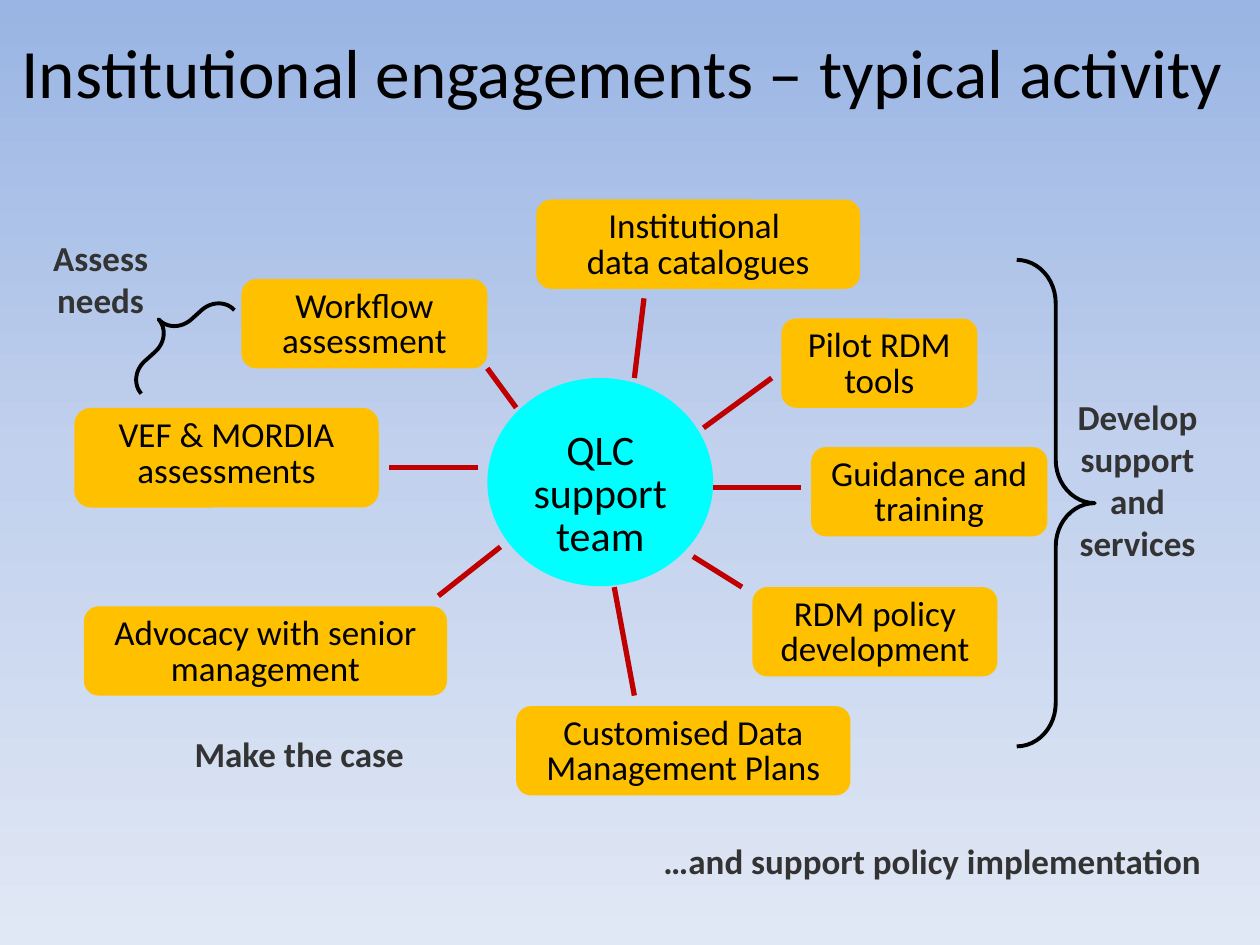
from copy import deepcopy
from lxml import etree
from pptx import Presentation
from pptx import util as u
from pptx.dml.color import RGBColor
from pptx.enum import shapes, text
from pptx.oxml import ns

BLACK, GREY, AMBER, CYAN, RED = "000000", "333333", "FFC000", "00FFFF", "C00000"


def paint(color, value):
    color.rgb = RGBColor.from_string(value)


def write(shape, words, size=20, color=BLACK, bold=False, align="CENTER",
          anchor="TOP", spacing=None, top=3.6):
    frame = shape.text_frame
    frame.word_wrap = True
    frame.margin_top = u.Pt(top)
    frame.vertical_anchor = getattr(text.MSO_ANCHOR, anchor)
    frame.text = words
    for para in frame.paragraphs:
        para.alignment = getattr(text.PP_ALIGN, align)
        if spacing:
            para.line_spacing = spacing
        for span in para.runs:
            span.font.name = "Calibri"
            span.font.size = u.Pt(size)
            span.font.bold = bold
            paint(span.font.color, color)


deck = Presentation()
deck.slide_width, deck.slide_height = u.Pt(720), u.Pt(540)
page = deck.slides.add_slide(deck.slide_layouts[5])

backdrop = page.background.fill
backdrop.gradient()
backdrop.gradient_angle = 270
stop_list = page.element.find(".//" + ns.qn("a:gsLst"))
stop_list.insert(1, deepcopy(stop_list[0]))
stops = [(0, "9AB5E4"), (0.5, "C2D1ED"), (1, "E1E8F5")]
for stop, (position, color) in zip(backdrop.gradient_stops, stops):
    stop.position = position
    paint(stop.color, color)

title = page.shapes.title
title.left, title.top, title.width, title.height = map(u.Pt, (0, 12.5, 720, 56))
write(title, "Institutional engagements – typical activity ", size=39.6, anchor="MIDDLE")

labels = [
    ("Assess needs", 0, 131.5, 115, 55, "CENTER"),
    ("Make the case", 64.5, 415, 213, 32, "CENTER"),
    ("Develop support and services", 599.5, 222.5, 101, 104, "CENTER"),
    ("…and support policy implementation", 289.5, 476, 404, 32, "RIGHT"),
]
for words, left, top, width, height, align in labels:
    box = page.shapes.add_textbox(*map(u.Pt, (left, top, width, height)))
    write(box, words, color=GREY, bold=True, align=align)

braces = [(581, 148.5, 44.6, 278, 0), (86.5, 156, 25, 71.5, 228.1)]
for left, top, width, height, angle in braces:
    brace = page.shapes.add_shape(
        shapes.MSO_SHAPE.RIGHT_BRACE, *map(u.Pt, (left, top, width, height)))
    brace.adjustments[0], brace.adjustments[1] = 0.556, 0.5
    brace.rotation = angle
    brace.shadow.inherit = False
    brace.fill.background()
    brace.line.width = u.Pt(2.25)
    paint(brace.line.color, BLACK)

ROUND, OVAL = shapes.MSO_SHAPE.ROUNDED_RECTANGLE, shapes.MSO_SHAPE.OVAL
nodes = [
    ("QLC support team", 278.5, 216, 129, 119, OVAL, CYAN, 24, 13),
] + [(*activity, ROUND, AMBER, 20, 3.6) for activity in [
    ("Institutional \ndata catalogues", 306.5, 114, 185, 51),
    ("Pilot RDM tools", 446.5, 182, 112, 51),
    ("Guidance and training", 463.5, 255.5, 135, 51),
    ("RDM policy development", 430, 335.5, 140, 51),
    ("Customised Data Management Plans", 295, 403.5, 191, 51),
    ("Advocacy with senior management", 48, 346.5, 207.5, 51),
    ("VEF & MORDIA assessments", 42.5, 233, 174, 57),
    ("Workflow assessment", 138, 159.5, 140.5, 51),
]]
for words, left, top, width, height, kind, color, size, inset in nodes:
    node = page.shapes.add_shape(kind, *map(u.Pt, (left, top, width, height)))
    node.shadow.inherit = False
    node.fill.solid()
    paint(node.fill.fore_color, color)
    node.line.fill.background()
    write(node, words, size=size, spacing=0.85, top=inset)

spokes = [
    (368, 170.5, 362.5, 216),
    (402, 244.5, 441, 216),
    (407.5, 278.5, 458, 278.5),
    (424, 335.5, 396, 318),
    (362.5, 397.5, 351, 335.5),
    (250.5, 340.5, 286, 312.5),
    (222.5, 267, 273, 267),
    (278.5, 210.5, 295, 233),
]
for ends in spokes:
    spoke = page.shapes.add_connector(shapes.MSO_CONNECTOR.STRAIGHT, *map(u.Pt, ends))
    spoke.line.width = u.Pt(3)
    paint(spoke.line.color, RED)
    etree.SubElement(spoke.element.spPr, ns.qn("a:effectLst"))

deck.save("out.pptx")
